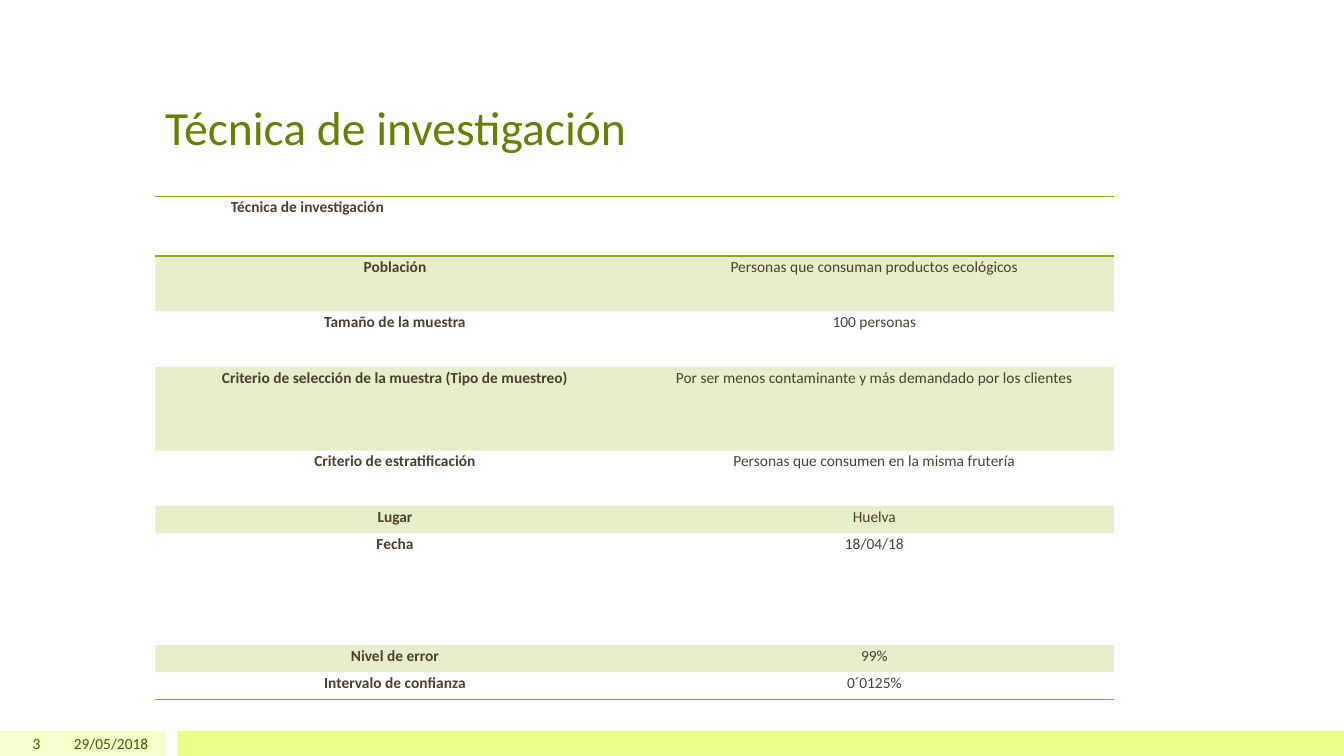
from dataclasses import dataclass

from lxml import etree
from pptx import Presentation
from pptx.dml.color import RGBColor
from pptx.enum.shapes import MSO_SHAPE
from pptx.enum.text import MSO_ANCHOR, PP_ALIGN
from pptx.oxml.ns import qn
from pptx.slide import Slide
from pptx.table import Table, _Cell
from pptx.text.text import _Paragraph
from pptx.util import Inches, Pt

RECT = MSO_SHAPE.RECTANGLE
LEFT, CENTER, RIGHT = PP_ALIGN.LEFT, PP_ALIGN.CENTER, PP_ALIGN.RIGHT
MIDDLE, BOTTOM = MSO_ANCHOR.MIDDLE, MSO_ANCHOR.BOTTOM
PLAIN = "{2D5ABB26-0587-4C30-8999-92F81FD0307C}"


@dataclass(frozen=True)
class Theme:
    font: str = "Calibri"
    title: str = "688000"
    body: str = "4D3E2F"
    foot: str = "455500"
    green: str = "8BAA00"
    pale: str = "F6FFCC"
    lime: str = "E9FF88"
    large: int = 34
    small: int = 11
    tint: int = 20
    rule: int = 1


@dataclass(frozen=True)
class Bar:
    left: float
    width: float
    color: str


@dataclass(frozen=True)
class Label:
    text: str
    left: float
    top: float
    width: float
    height: float
    size: int
    color: str
    align: PP_ALIGN
    anchor: MSO_ANCHOR


@dataclass(frozen=True)
class Row:
    name: str
    value: str
    height: float


THEME = Theme()
FOOT, DEPTH = 7.25, 0.25
BARS = [Bar(0, 1.64, THEME.pale), Bar(1.76, 11.57, THEME.lime)]
LABELS = [
    Label("Técnica de investigación", 1.54, 0.3, 10.25, 1.29,
          THEME.large, THEME.title, LEFT, BOTTOM),
    Label("3", 0, FOOT, 0.5, DEPTH, THEME.small, THEME.foot, RIGHT, MIDDLE),
    Label("29/05/2018", 0.55, FOOT, 1.02, DEPTH,
          THEME.small, THEME.foot, RIGHT, MIDDLE),
]
ROWS = [
    Row("\tTécnica de investigación", "", 0.59),
    Row("Población", "Personas que consuman productos ecológicos", 0.55),
    Row("Tamaño de la muestra", "100 personas", 0.55),
    Row("Criterio de selección de la muestra (Tipo de muestreo)",
        "Por ser menos contaminante y más demandado por los clientes", 0.83),
    Row("Criterio de estratificación",
        "Personas que consumen en la misma frutería", 0.55),
    Row("Lugar", "Huelva", 0.27),
    Row("Fecha", "18/04/18", 1.11),
    Row("Nivel de error", "99%", 0.27),
    Row("Intervalo de confianza", "0´0125%", 0.27),
]


def style(para: _Paragraph, size: int, color: str, bold: bool = False) -> None:
    """Format every run of a paragraph."""
    for run in para.runs:
        run.font.name = THEME.font
        run.font.size = Pt(size)
        run.font.bold = bold
        run.font.color.rgb = RGBColor.from_string(color)


def draw_bar(slide: Slide, bar: Bar) -> None:
    """Draw one footer band."""
    shape = slide.shapes.add_shape(
        RECT, Inches(bar.left), Inches(FOOT), Inches(bar.width), Inches(DEPTH))
    shape.shadow.inherit = False
    shape.fill.solid()
    shape.fill.fore_color.rgb = RGBColor.from_string(bar.color)
    shape.line.fill.background()


def draw_label(slide: Slide, label: Label) -> None:
    """Draw one text box."""
    box = slide.shapes.add_textbox(
        Inches(label.left), Inches(label.top),
        Inches(label.width), Inches(label.height))
    frame = box.text_frame
    frame.word_wrap = True
    frame.vertical_anchor = label.anchor
    frame.text = label.text
    para = frame.paragraphs[0]
    para.alignment = label.align
    style(para, label.size, label.color)


def add_rule(cell: _Cell, side: str) -> None:
    """Add a green border on one side of a cell."""
    line = etree.Element(qn(f"a:{side}"), w=str(Pt(THEME.rule)))
    fill = etree.SubElement(line, qn("a:solidFill"))
    etree.SubElement(fill, qn("a:srgbClr"), val=THEME.green)
    cell._tc.get_or_add_tcPr().insert(0, line)


def tint_cell(cell: _Cell) -> None:
    """Fill a cell with translucent green."""
    cell.fill.solid()
    cell.fill.fore_color.rgb = RGBColor.from_string(THEME.green)
    color = cell._tc.tcPr.find(f".//{qn('a:srgbClr')}")
    etree.SubElement(color, qn("a:alpha"), val=str(THEME.tint * 1000))


def write_cell(cell: _Cell, text: str, bold: bool) -> None:
    """Write and align the text of a cell."""
    cell.margin_left = cell.margin_right = Inches(0.07)
    cell.margin_top = cell.margin_bottom = 0
    cell.text_frame.text = text
    para = cell.text_frame.paragraphs[0]
    para.line_spacing = 1.07
    if text.startswith("\t"):
        tabs = etree.SubElement(para._p.get_or_add_pPr(), qn("a:tabLst"))
        etree.SubElement(tabs, qn("a:tab"), pos=str(Inches(0.68)), algn="l")
    else:
        para.alignment = CENTER
    style(para, THEME.small, THEME.body, bold)


def fill_row(table: Table, index: int, row: Row) -> None:
    """Fill one table row with its text, tint and rules."""
    table.rows[index].height = Inches(row.height)
    for col, text in enumerate((row.name, row.value)):
        cell = table.cell(index, col)
        write_cell(cell, text, col == 0)
        if index % 2:
            tint_cell(cell)
        else:
            cell.fill.background()
        if index in (0, len(ROWS) - 1):
            add_rule(cell, "lnB")
        if index == 0:
            add_rule(cell, "lnT")


def draw_table(slide: Slide) -> None:
    """Draw the research table."""
    height = sum(row.height for row in ROWS)
    table = slide.shapes.add_table(
        len(ROWS), 2, Inches(1.54), Inches(1.95),
        Inches(9.51), Inches(height)).table
    table.first_row = table.horz_banding = False
    table._tbl.tblPr.find(qn("a:tableStyleId")).text = PLAIN
    for index, row in enumerate(ROWS):
        fill_row(table, index, row)


def main() -> None:
    """Build and save the slide."""
    deck = Presentation()
    deck.slide_width, deck.slide_height = Inches(13.33), Inches(7.5)
    slide = deck.slides.add_slide(deck.slide_layouts[6])
    for bar in BARS:
        draw_bar(slide, bar)
    for label in LABELS:
        draw_label(slide, label)
    draw_table(slide)
    deck.save("out.pptx")


if __name__ == "__main__":
    main()
